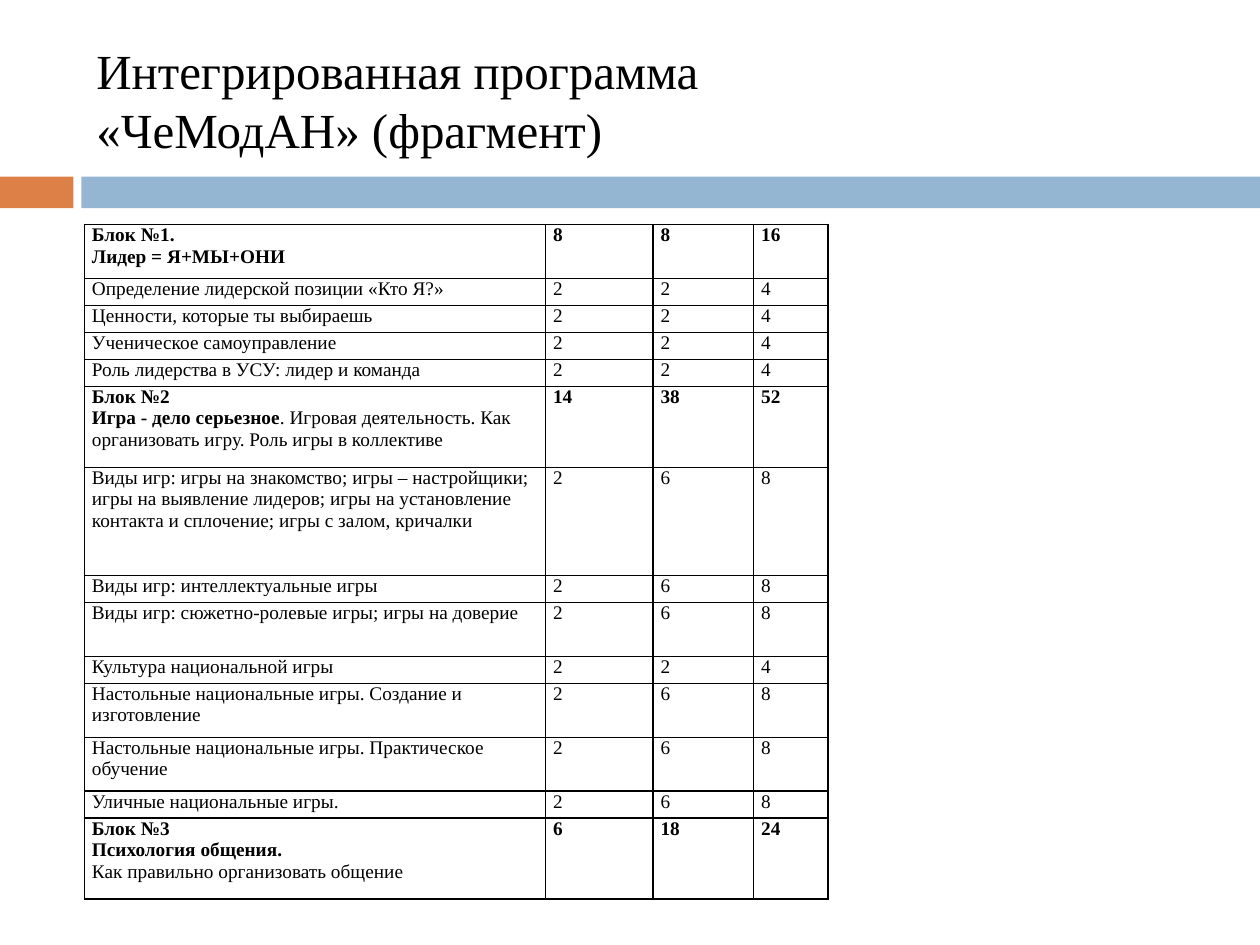
from lxml import etree
from pptx import Presentation
from pptx.dml.color import RGBColor
from pptx.enum.shapes import MSO_SHAPE as SHAPE
from pptx.enum.text import MSO_ANCHOR as ANCHOR
from pptx.oxml.ns import qn
from pptx.util import Pt

COLORS = {"text": "000000", "line": "000000", "white": "FFFFFF",
          "orange": "DD8047", "blue": "94B6D2"}
FONT = "Times New Roman"
COL_WIDTHS = [263.5, 61.5, 57.5, 42.5]
ROW_UNIT = 15.43

# Each row: height in units, white fill, bold numbers, paragraphs of (text, bold) runs, numbers
ROWS = [
    (2, True, True, [[("Блок №1.", True)], [("Лидер = Я+МЫ+ОНИ", True)]], (8, 8, 16)),
    (1, True, False, [[("Определение лидерской позиции «Кто Я?»", False)]], (2, 2, 4)),
    (1, True, False, [[("Ценности, которые ты выбираешь", False)]], (2, 2, 4)),
    (1, True, False, [[("Ученическое самоуправление", False)]], (2, 2, 4)),
    (1, True, False, [[("Роль лидерства в УСУ: лидер и команда", False)]], (2, 2, 4)),
    (3, True, True, [[("Блок №2", True)],
                     [("Игра - дело серьезное", True),
                      (". Игровая деятельность. Как организовать игру. "
                       "Роль игры в коллективе", False)]], (14, 38, 52)),
    (4, False, False, [[("Виды игр: игры на знакомство; игры – настройщики; "
                         "игры на выявление лидеров; игры на установление контакта "
                         "и сплочение; игры с залом, кричалки", False)]], (2, 6, 8)),
    (1, False, False, [[("Виды игр: интеллектуальные игры", False)]], (2, 6, 8)),
    (2, False, False, [[("Виды игр: сюжетно-ролевые игры; игры на доверие", False)]], (2, 6, 8)),
    (1, False, False, [[("Культура национальной игры", False)]], (2, 2, 4)),
    (2, False, False, [[("Настольные национальные игры. Создание и изготовление", False)]],
     (2, 6, 8)),
    (2, False, False, [[("Настольные национальные игры. Практическое обучение", False)]],
     (2, 6, 8)),
    (1, False, False, [[("Уличные национальные игры.", False)]], (2, 6, 8)),
    (3, True, True, [[("Блок №3", True)], [("Психология общения.", True)],
                     [("Как правильно организовать общение", False)]], (6, 18, 24)),
]


def rgb(name):
    return RGBColor.from_string(COLORS[name])


def add_run(p, text, size, bold=False):
    r = p.add_run()
    r.text = text
    r.font.name, r.font.size, r.font.bold = FONT, Pt(size), bold
    r.font.color.rgb = rgb("text")


def add_band(s, x, y, w, h):
    """Orange block and blue bar, with a narrow gap between them."""
    block, gap = 42, 4.5
    parts = [(x, block, "orange"), (x + block + gap, w - block - gap, "blue")]
    for left, width, color in parts:
        sp = s.shapes.add_shape(SHAPE.RECTANGLE, Pt(left), Pt(y), Pt(width), Pt(h))
        sp.shadow.inherit = False
        sp.fill.solid()
        sp.fill.fore_color.rgb = rgb(color)
        sp.line.fill.background()


def add_title(s, x, y, w, h):
    tf = s.shapes.add_textbox(Pt(x), Pt(y), Pt(w), Pt(h)).text_frame
    tf.word_wrap = True
    tf.vertical_anchor = ANCHOR.MIDDLE
    p = tf.paragraphs[0]
    p.line_spacing = Pt(33.5)
    add_run(p, "Интегрированная программа", 28)
    p.add_line_break()
    add_run(p, "«ЧеМодАН» (фрагмент)", 28)


def set_borders(cell):
    tc_pr = cell._tc.get_or_add_tcPr()
    for side in ("a:lnL", "a:lnR", "a:lnT", "a:lnB"):
        ln = etree.SubElement(tc_pr, qn(side), w=str(Pt(1)))
        fill = etree.SubElement(ln, qn("a:solidFill"))
        etree.SubElement(fill, qn("a:srgbClr"), val=COLORS["line"])


def fill_cell(cell, paragraphs, white):
    cell.margin_left = cell.margin_right = Pt(4.3)
    cell.margin_top = cell.margin_bottom = 0
    set_borders(cell)
    if white:
        cell.fill.solid()
        cell.fill.fore_color.rgb = rgb("white")
    else:
        cell.fill.background()
    tf = cell.text_frame
    for i, runs in enumerate(paragraphs):
        p = tf.add_paragraph() if i else tf.paragraphs[0]
        for text, bold in runs:
            add_run(p, text, 11, bold)


def add_program_table(s, x, y):
    height = ROW_UNIT * sum(row[0] for row in ROWS)
    table = s.shapes.add_table(len(ROWS), len(COL_WIDTHS), Pt(x), Pt(y),
                               Pt(sum(COL_WIDTHS)), Pt(height)).table
    table.first_row = table.horz_banding = False
    for col, width in zip(table.columns, COL_WIDTHS):
        col.width = Pt(width)
    for row, (units, white, bold, topic, hours) in zip(table.rows, ROWS):
        row.height = Pt(units * ROW_UNIT)
        contents = [topic] + [[[(str(n), bold)]] for n in hours]
        for cell, paragraphs in zip(row.cells, contents):
            fill_cell(cell, paragraphs, white)


def main():
    prs = Presentation()
    prs.slide_width, prs.slide_height = Pt(720), Pt(540)
    s = prs.slides.add_slide(prs.slide_layouts[6])
    add_band(s, 0, 101, 720, 18)
    add_title(s, 48, 18, 642, 78)
    add_program_table(s, 48.25, 128.25)
    prs.save("out.pptx")


if __name__ == "__main__":
    main()
